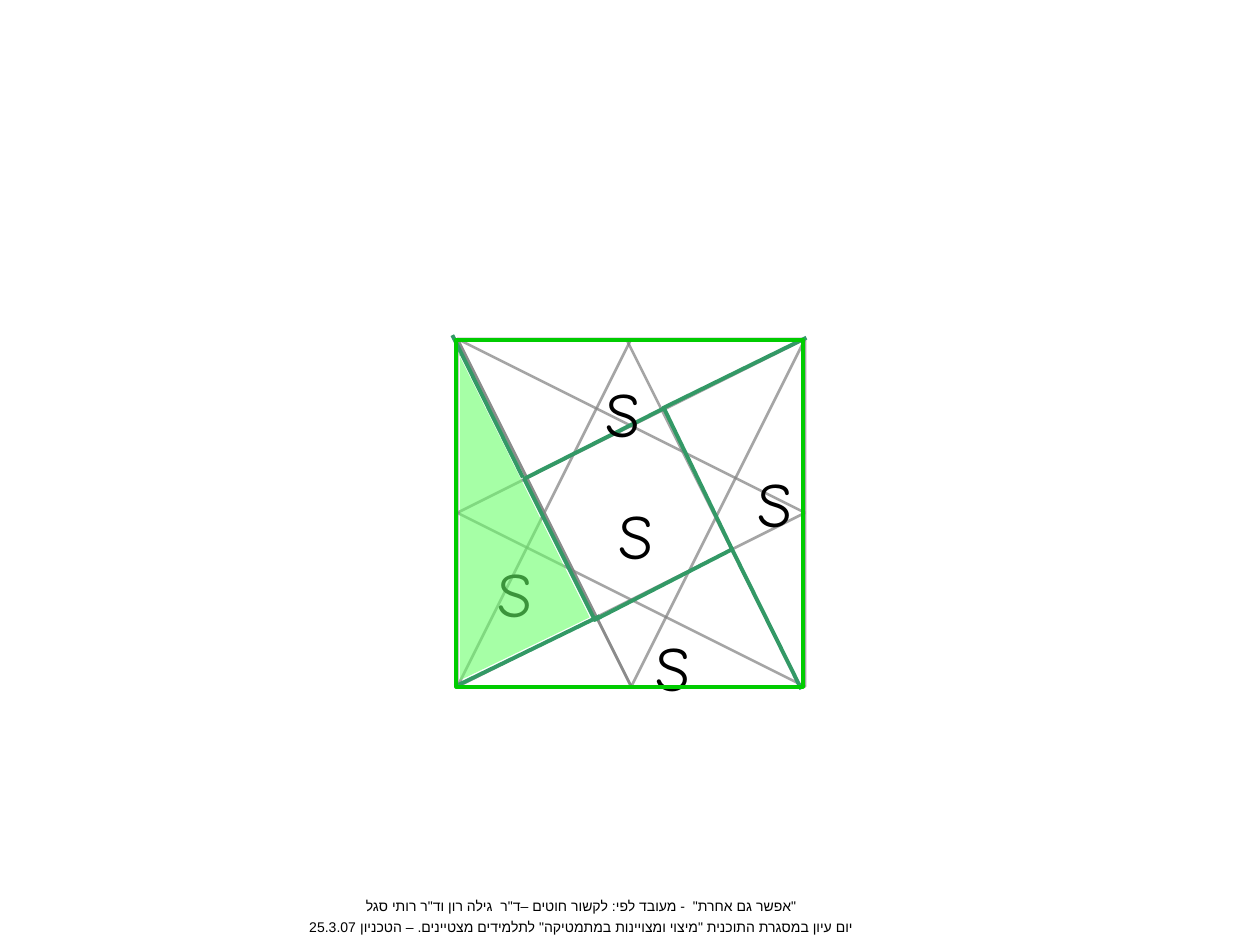
from dataclasses import dataclass

from lxml import etree
from pptx import Presentation
from pptx import util as u
from pptx.dml.color import RGBColor
from pptx.enum import shapes, text
from pptx.oxml.ns import qn


@dataclass(frozen=True)
class Theme:
    grid: str = "808080"
    pinwheel: str = "339966"
    frame: str = "00CC00"
    highlight: str = "66FF66"
    ink: str = "000000"
    label_font: str = "Comic Neue"
    credit_font: str = "Arial"
    label_size: float = 36
    credit_size: float = 8
    thin: float = 1.5
    thick: float = 2.25


THEME = Theme()


def add_alpha(parent, percent):
    """Make the solid colour below parent partly transparent."""
    colour = next(parent.iter(qn("a:srgbClr")))
    etree.SubElement(colour, qn("a:alpha"), val=str(percent * 1000))


def set_line(part, colour, width, opacity=100):
    part.line.color.rgb = RGBColor.from_string(colour)
    part.line.width = u.Pt(width)
    if opacity < 100:
        add_alpha(part.line._get_or_add_ln(), opacity)


def place(box, point):
    """Slide position of a point given in inches from the box corner."""
    return u.Inches(box[0] + point[0]), u.Inches(box[1] + point[1])


def add_segment(parts, box, start, end, *style):
    segment = parts.add_connector(
        shapes.MSO_CONNECTOR.STRAIGHT, *place(box, start), *place(box, end))
    set_line(segment, *style)
    etree.SubElement(segment._element.spPr, qn("a:effectLst"))


def add_square(parts, box, *style):
    left, top, side = map(u.Inches, box)
    square = parts.add_shape(shapes.MSO_SHAPE.RECTANGLE, left, top, side, side)
    square.shadow.inherit = False
    square.fill.background()
    set_line(square, *style)


def add_polygon(parts, box, points):
    start, *others = [place(box, point) for point in points]
    builder = parts.build_freeform(*start)
    builder.add_line_segments(others, close=True)
    polygon = builder.convert_to_shape()
    polygon.shadow.inherit = False
    return polygon


def add_star(slide, box):
    """Grey square whose corners are joined to the midpoints of its sides."""
    parts = slide.shapes.add_group_shape().shapes
    style = THEME.grid, THEME.thin, 70
    add_square(parts, box, *style)
    side = box[2]
    half = side / 2
    shift = 0.04
    for start, end in (
        ((0, 0), (side, half)),
        ((0, half), (side, 0)),
        ((0, side), (side, half)),
        ((0, half), (side, side)),
        ((half, side), (side, 0)),
        ((0, 0), (half, side)),
        ((0, 0), (half, side)),
        ((half, 0), (0, side)),
        ((half - shift, 0), (side - shift, side)),
    ):
        add_segment(parts, box, start, end, *style)


def add_pinwheel(slide, box):
    """Inner square with one arm running to each corner."""
    style = THEME.pinwheel, THEME.thick
    inner = add_polygon(slide.shapes, box, [
        (0.53, 1.11), (1.64, 0.55), (2.18, 1.67), (1.09, 2.23), (1.08, 2.21)])
    inner.fill.background()
    set_line(inner, *style)
    for start, end in (
        ((1.63, 0.55), (2.77, -0.01)),
        ((-0.02, 2.76), (1.13, 2.2)),
        ((2.73, 2.78), (2.17, 1.65)),
        ((0.52, 1.1), (-0.04, -0.03)),
    ):
        add_segment(slide.shapes, box, start, end, *style)


def add_area_labels(slide, box):
    """The same area sign S on each of the five pieces."""
    for corner in ((1.08, 0.23), (1.18, 1.2), (2.28, 0.95),
                   (1.47, 2.25), (0.22, 1.66)):
        label = slide.shapes.add_textbox(
            *place(box, corner), u.Inches(0.21), u.Inches(0.29))
        label.text_frame.word_wrap = False
        sign = label.text_frame.paragraphs[0]
        sign.text = "S"
        sign.alignment = text.PP_ALIGN.CENTER
        set_font(sign, THEME.label_font, THEME.label_size)
        # Outline in the colour of the letter
        outline = etree.Element(qn("a:ln"), w=str(u.Pt(0.75)))
        fill = etree.SubElement(outline, qn("a:solidFill"))
        etree.SubElement(fill, qn("a:srgbClr"), val=THEME.ink)
        sign._p.pPr.find(qn("a:defRPr")).insert(0, outline)


def set_font(paragraph, name, size):
    paragraph.font.name = name
    paragraph.font.size = u.Pt(size)
    paragraph.font.color.rgb = RGBColor.from_string(THEME.ink)


def add_highlight(slide, box):
    """Transparent triangle over the left piece."""
    triangle = add_polygon(slide.shapes, box, [
        (0.02, 0.11), (0.02, 2.71), (1.05, 2.21), (0.01, 0.12)])
    triangle.fill.solid()
    triangle.fill.fore_color.rgb = RGBColor.from_string(THEME.highlight)
    add_alpha(triangle._element.spPr, 58)
    triangle.line.fill.background()


def add_credit(slide, box):
    credit = slide.shapes.add_textbox(*map(u.Inches, box))
    frame = credit.text_frame
    frame.word_wrap = True
    frame.auto_size = text.MSO_AUTO_SIZE.SHAPE_TO_FIT_TEXT
    frame.text = (
        '"אפשר גם אחרת"  - מעובד לפי: לקשור חוטים –ד"ר  גילה רון וד"ר רותי סגל\n'
        'יום עיון במסגרת התוכנית "מיצוי ומצויינות במתמטיקה" לתלמידים מצטיינים.'
        ' – הטכניון 25.3.07')
    for row, line in enumerate(frame.paragraphs):
        line.alignment = text.PP_ALIGN.CENTER
        line._p.get_or_add_pPr().set("rtl", "1")
        if row:
            line.space_before = u.Pt(0.3 * THEME.credit_size)
        set_font(line, THEME.credit_font, THEME.credit_size)
        # Hebrew letters take the complex-script font
        etree.SubElement(line._p.pPr.find(qn("a:defRPr")), qn("a:cs"),
                         typeface=THEME.credit_font)


def main():
    deck = Presentation()
    deck.slide_width, deck.slide_height = u.Inches(10), u.Inches(7.5)
    slide = deck.slides.add_slide(deck.slide_layouts[6])
    figure = 3.63, 2.69, 2.76
    add_star(slide, figure)
    add_pinwheel(slide, figure)
    add_area_labels(slide, figure)
    add_highlight(slide, figure)
    add_square(slide.shapes, (3.62, 2.7, 2.75), THEME.frame, THEME.thick)
    add_credit(slide, (0.94, 7.07, 7.35, 0.41))
    deck.save("out.pptx")


if __name__ == "__main__":
    main()
